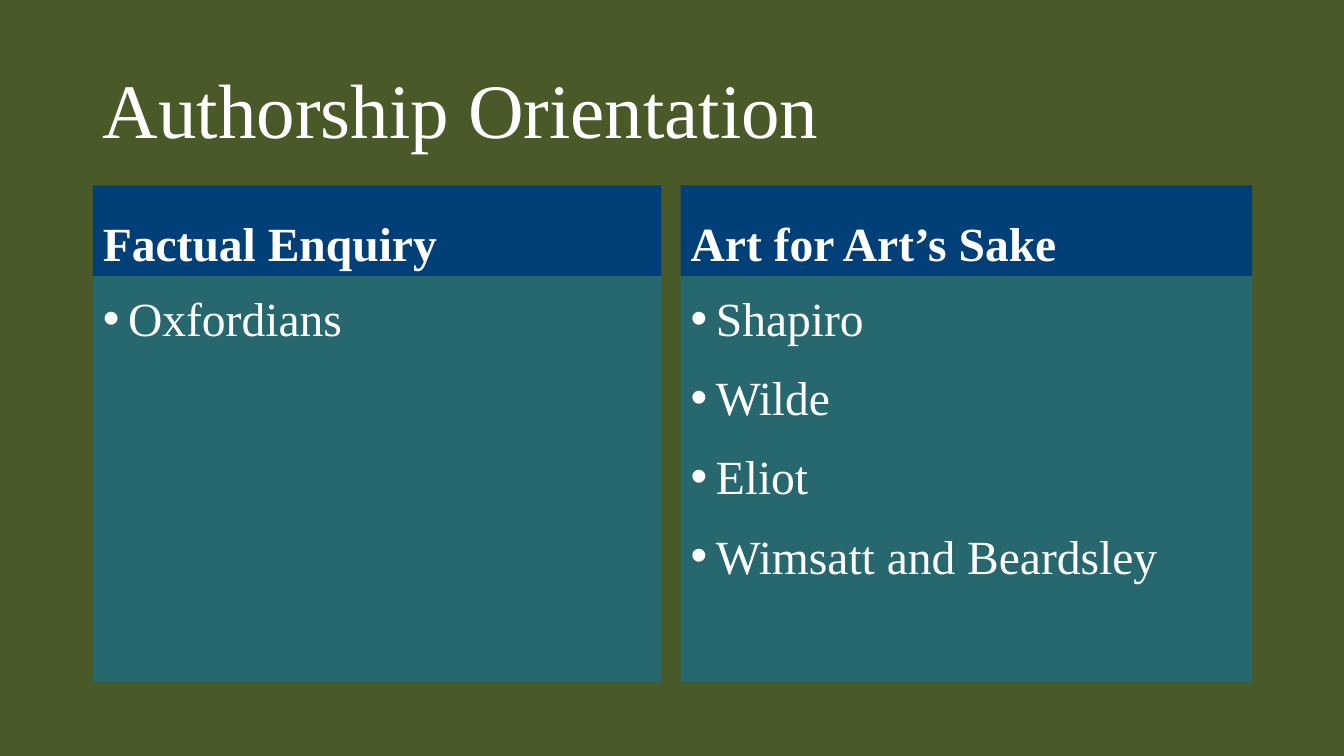
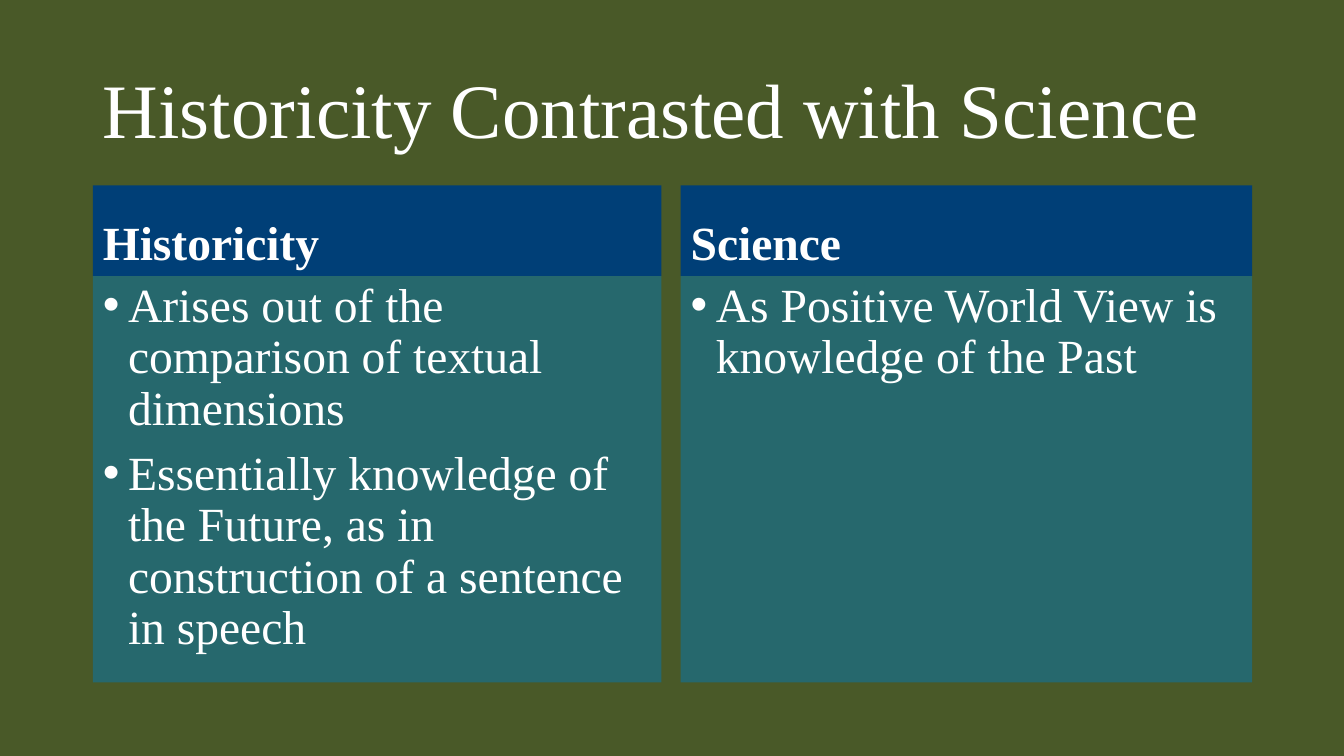
from dataclasses import dataclass

from lxml import etree
from pptx import Presentation
from pptx.dml.color import RGBColor
from pptx.enum.text import MSO_ANCHOR, MSO_AUTO_SIZE, PP_ALIGN
from pptx.oxml.ns import qn
from pptx.util import Inches, Pt

MIDDLE, BOTTOM, TOP = MSO_ANCHOR.MIDDLE, MSO_ANCHOR.BOTTOM, MSO_ANCHOR.TOP
NO_AUTOFIT = MSO_AUTO_SIZE.NONE
LEFT_ALIGNED = PP_ALIGN.LEFT

COLOURS = {
    "background": "495928",
    "heading": "003F77",
    "list": "26686D",
    "text": "FFFFFF",
}
FONT = "Times New Roman"
TITLE_SIZE, BODY_SIZE = 55, 34
TITLE_SPACING = 0.9
PARAGRAPH_GAP = 10
BULLET_INDENT = 0.25

SLIDE_WIDTH, SLIDE_HEIGHT = 13.33, 7.5
COMPARISON_LAYOUT = 5 - 1
MARGIN = 0.92
TITLE_TOP, TITLE_HEIGHT = 0.4, 1.45
HEADING_TOP, HEADING_HEIGHT = 1.84, 0.9
LIST_TOP, LIST_HEIGHT = HEADING_TOP + HEADING_HEIGHT, 4.03
COLUMN_LEFTS = (MARGIN, 6.75)
COLUMN_WIDTHS = (5.64, 5.67)


@dataclass(frozen=True)
class Column:
    heading: str
    items: tuple[str, ...]


@dataclass(frozen=True)
class Comparison:
    title: str
    columns: tuple[Column, Column]
    line_spacing: float


COMPARISONS = (
    Comparison(
        "Authorship Orientation",
        (
            Column("Factual Enquiry", ("Oxfordians",)),
            Column(
                "Art for Art’s Sake",
                ("Shapiro", "Wilde", "Eliot", "Wimsatt and Beardsley"),
            ),
        ),
        1.14,
    ),
    Comparison(
        "Historicity Contrasted with Science",
        (
            Column(
                "Historicity",
                (
                    "Arises out of the comparison of textual dimensions",
                    "Essentially knowledge of the Future, as in construction of a sentence in speech",
                ),
            ),
            Column("Science", ("As Positive World View is knowledge of the Past",)),
        ),
        0.9,
    ),
)


def colour(name: str) -> RGBColor:
    return RGBColor.from_string(COLOURS[name])


def place(shape, left: float, top: float, width: float, height: float) -> None:
    shape.left, shape.top = Inches(left), Inches(top)
    shape.width, shape.height = Inches(width), Inches(height)


def fill(shape, name: str) -> None:
    shape.fill.solid()
    shape.fill.fore_color.rgb = colour(name)


def write(shape, lines: tuple[str, ...], size: int, spacing: float, anchor, bold: bool = False) -> None:
    frame = shape.text_frame
    frame.text = "\n".join(lines)
    frame.word_wrap = True
    frame.auto_size = NO_AUTOFIT
    frame.vertical_anchor = anchor
    frame.margin_left = frame.margin_right = Inches(0.1)
    frame.margin_top = frame.margin_bottom = Inches(0.05)
    for index, paragraph in enumerate(frame.paragraphs):
        paragraph.alignment = LEFT_ALIGNED
        paragraph.line_spacing = spacing
        paragraph.space_before = Pt(PARAGRAPH_GAP if index else 0)
        for run in paragraph.runs:
            run.font.name = FONT
            run.font.size = Pt(size)
            run.font.bold = bold
            run.font.color.rgb = colour("text")


def add_bullets(shape) -> None:
    indent = Inches(BULLET_INDENT)
    for paragraph in shape.text_frame.paragraphs:
        properties = paragraph._p.get_or_add_pPr()
        properties.set("marL", str(indent))
        properties.set("indent", str(-indent))
        bullet_colour = etree.SubElement(properties, qn("a:buClr"))
        etree.SubElement(bullet_colour, qn("a:srgbClr"), val=COLOURS["text"])
        etree.SubElement(properties, qn("a:buFont"), typeface="Arial")
        etree.SubElement(properties, qn("a:buChar"), char="•")


def add_comparison(presentation, comparison: Comparison) -> None:
    slide = presentation.slides.add_slide(presentation.slide_layouts[COMPARISON_LAYOUT])
    title, *bodies = slide.placeholders
    place(title, MARGIN, TITLE_TOP, 11.5, TITLE_HEIGHT)
    write(title, (comparison.title,), TITLE_SIZE, TITLE_SPACING, MIDDLE)

    heading_shapes, list_shapes = bodies[0::2], bodies[1::2]
    for column, heading, items, left, width in zip(
        comparison.columns, heading_shapes, list_shapes, COLUMN_LEFTS, COLUMN_WIDTHS
    ):
        place(heading, left, HEADING_TOP, width, HEADING_HEIGHT)
        fill(heading, "heading")
        write(heading, (column.heading,), BODY_SIZE, comparison.line_spacing, BOTTOM, bold=True)
        place(items, left, LIST_TOP, width, LIST_HEIGHT)
        fill(items, "list")
        write(items, column.items, BODY_SIZE, comparison.line_spacing, TOP)
        add_bullets(items)


def main() -> None:
    presentation = Presentation()
    presentation.slide_width = Inches(SLIDE_WIDTH)
    presentation.slide_height = Inches(SLIDE_HEIGHT)
    background = presentation.slide_master.background.fill
    background.solid()
    background.fore_color.rgb = colour("background")
    for comparison in COMPARISONS:
        add_comparison(presentation, comparison)
    presentation.save("out.pptx")


if __name__ == "__main__":
    main()
